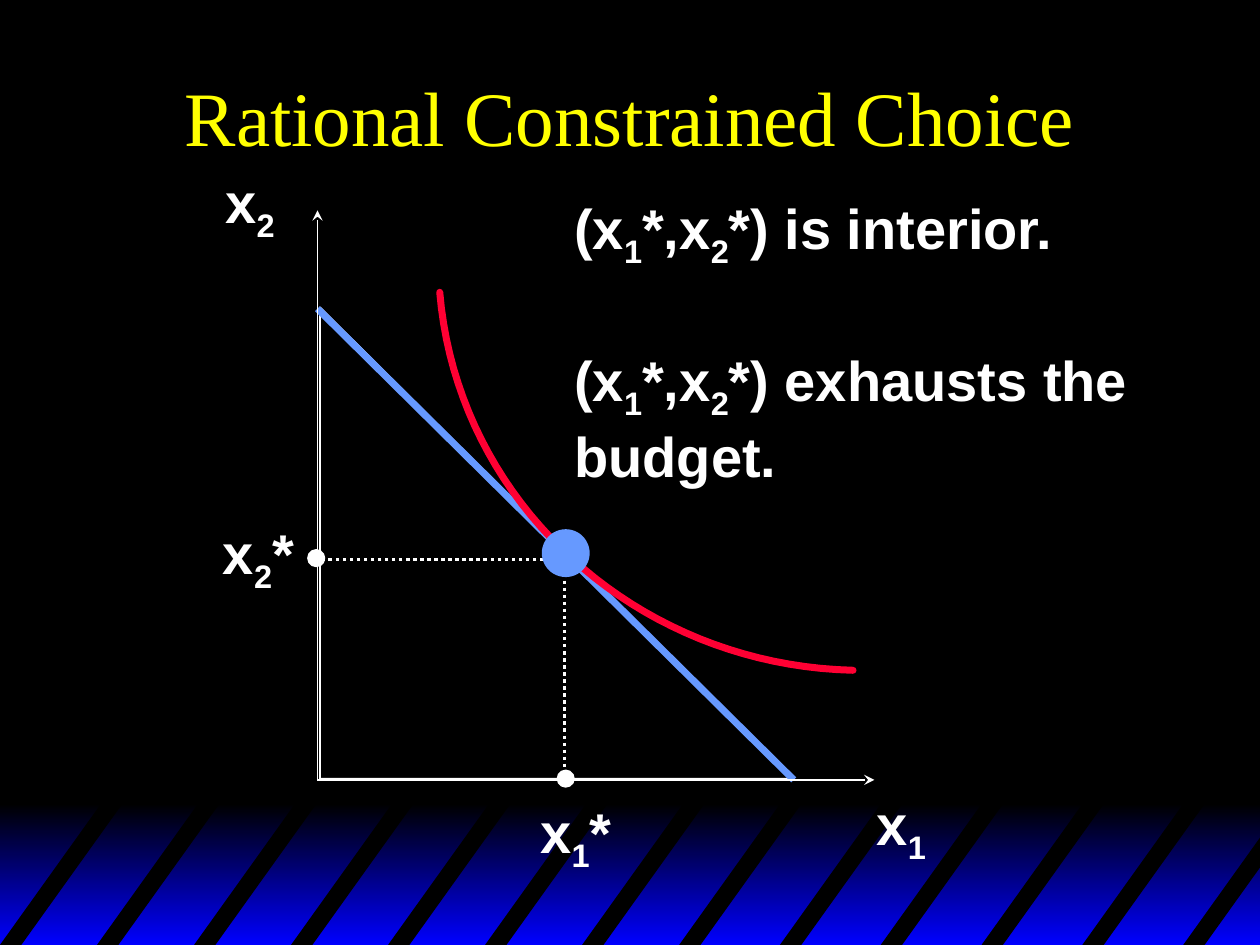
from dataclasses import dataclass
from typing import Optional

import pptx
import pptx.dml.color
import pptx.enum.dml
import pptx.enum.shapes
import pptx.enum.text
import pptx.oxml.ns
import pptx.util
from lxml import etree

COLORS = {"black": "000000", "navy": "0000FF", "white": "FFFFFF",
          "title": "FFFF00", "budget": "6699FF", "curve": "FF0033"}
SHAPES = pptx.enum.shapes.MSO_SHAPE

presentation = pptx.Presentation()
presentation.slide_width = pptx.util.Inches(10)
presentation.slide_height = pptx.util.Inches(7.5)
slide = presentation.slides.add_slide(presentation.slide_layouts[6])

# Grid of 100 columns by 75 rows of square cells
COLUMNS, ROWS = 100, 75
CELL = presentation.slide_width / COLUMNS
ORIGIN_X, ORIGIN_Y = 25.2, 61.9  # where the axes meet
CHOICE_X, CHOICE_Y = 44.8, 44.4  # the optimal bundle


@dataclass(frozen=True)
class Segment:
    start: tuple[float, float]
    end: tuple[float, float]
    width: float = 1
    color: str = "white"
    dotted: bool = False
    arrow: bool = False


@dataclass(frozen=True)
class Dot:
    x: float
    y: float
    size: float
    color: str
    outlined: bool = True


@dataclass(frozen=True)
class Label:
    text: str  # "_" puts the next character in subscript
    box: tuple[float, float, float, float]


def cells(*values: float) -> list[int]:
    return [round(value * CELL) for value in values]


def rgb(name: str) -> pptx.dml.color.RGBColor:
    return pptx.dml.color.RGBColor.from_string(COLORS[name])


def style(shape, fill: Optional[str] = None, line: Optional[str] = None,
          width: float = 1) -> None:
    shape.shadow.inherit = False
    if fill:
        shape.fill.solid()
        shape.fill.fore_color.rgb = rgb(fill)
    else:
        shape.fill.background()
    if line:
        shape.line.color.rgb = rgb(line)
        shape.line.width = pptx.util.Pt(width)
    else:
        shape.line.fill.background()


def add_outline(points: list[tuple[float, float]], close: bool):
    corners = [tuple(cells(*point)) for point in points]
    builder = slide.shapes.build_freeform(*corners[0])
    builder.add_line_segments(corners[1:], close=close)
    return builder.convert_to_shape()


def add_segment(segment: Segment) -> None:
    connector = slide.shapes.add_connector(
        pptx.enum.shapes.MSO_CONNECTOR.STRAIGHT,
        *cells(*segment.start, *segment.end))
    connector.line.color.rgb = rgb(segment.color)
    connector.line.width = pptx.util.Pt(segment.width)
    if segment.dotted:
        connector.line.dash_style = pptx.enum.dml.MSO_LINE.ROUND_DOT
    if segment.arrow:
        etree.SubElement(connector.line._get_or_add_ln(),
                         pptx.oxml.ns.qn("a:tailEnd"), type="stealth")
    etree.SubElement(connector._element.spPr, pptx.oxml.ns.qn("a:effectLst"))


def add_dot(dot: Dot) -> None:
    half = dot.size / 2
    shape = slide.shapes.add_shape(
        SHAPES.OVAL, *cells(dot.x - half, dot.y - half, dot.size, dot.size))
    style(shape, dot.color, dot.color if dot.outlined else None)


def add_text(text: str, box: tuple[float, float, float, float], *,
             font: str = "Arial", size: float = 32, color: str = "white",
             bold: bool = True, wrap: bool = False, centered: bool = False) -> None:
    frame = slide.shapes.add_textbox(*cells(*box)).text_frame
    frame.word_wrap = wrap
    paragraph = frame.paragraphs[0]
    if centered:
        frame.vertical_anchor = pptx.enum.text.MSO_ANCHOR.MIDDLE
        paragraph.alignment = pptx.enum.text.PP_ALIGN.CENTER
    else:
        frame.auto_size = pptx.enum.text.MSO_AUTO_SIZE.SHAPE_TO_FIT_TEXT

    def add_run(content: str, subscript: bool = False) -> None:
        run = paragraph.add_run()
        run.text = content
        run.font.name, run.font.size, run.font.bold = font, pptx.util.Pt(size), bold
        run.font.color.rgb = rgb(color)
        if subscript:
            run.font._element.set("baseline", "-25000")

    for row, line in enumerate(text.split("\n")):
        if row:
            paragraph.add_line_break()
        first, *others = line.split("_")
        add_run(first)
        for part in others:
            add_run(part[0], subscript=True)
            if part[1:]:
                add_run(part[1:])


def add_stripe(left: float, thickness: float = 1.7,
               run: float = 8.3, rise: float = 11.6) -> None:
    def top(x: float) -> tuple[float, float]:
        end = min(COLUMNS, x + run)  # cut at the slide's right edge
        return end, ROWS - (end - x) * rise / run

    right = left + thickness
    style(add_outline([(left, ROWS), top(left), top(right), (right, ROWS)], True),
          "black")


def bezier(points: list[tuple[float, float]], steps: int = 40) -> list[tuple[float, float]]:
    curve = []
    for step in range(steps + 1):
        t = step / steps
        weights = ((1 - t) ** 3, 3 * t * (1 - t) ** 2, 3 * t * t * (1 - t), t ** 3)
        curve.append(tuple(sum(weight * point[axis] for weight, point
                               in zip(weights, points)) for axis in (0, 1)))
    return curve


# Background: black, with a striped blue band at the foot
slide.background.fill.solid()
slide.background.fill.fore_color.rgb = rgb("black")
band = slide.shapes.add_shape(SHAPES.RECTANGLE, *cells(0, 63.8, COLUMNS, ROWS - 63.8))
style(band)
band.fill.gradient()
band.fill.gradient_angle = 270
for stop, name in zip(band.fill.gradient_stops, ("black", "navy")):
    stop.color.rgb = rgb(name)
for index in range(13):
    add_stripe(7.7 * index + 0.3 * max(0, index - 7))

# Budget set and title
budget_set = slide.shapes.add_shape(SHAPES.RIGHT_TRIANGLE, *cells(25.4, 24.4, 37.6, 37.4))
style(budget_set, line="white")
add_text("Rational Constrained Choice", (7.5, 2.5, 85, 13.3), font="Times New Roman",
         size=44, color="title", bold=False, wrap=True, centered=True)

# Budget line, indifference curve and axes
add_segment(Segment((ORIGIN_X, 24.5), (63, ORIGIN_Y), 4, "budget"))
indifference = add_outline(
    bezier([(67.7, 53.2), (50.5, 52.8), (36.3, 39.9), (34.9, 23.2)]), False)
style(indifference, line="curve", width=4)
curve_line = indifference.line._get_or_add_ln()
curve_line.set("cap", "rnd")
etree.SubElement(curve_line, pptx.oxml.ns.qn("a:round"))

SEGMENTS = [
    Segment((ORIGIN_X, ORIGIN_Y), (ORIGIN_X, 16.7), arrow=True),
    Segment((ORIGIN_X, ORIGIN_Y), (69.4, ORIGIN_Y), arrow=True),
    Segment((CHOICE_X, CHOICE_Y), (CHOICE_X, ORIGIN_Y), 2, dotted=True),
    Segment((CHOICE_X, CHOICE_Y), (25.4, CHOICE_Y), 2, dotted=True),
]
for segment in SEGMENTS:
    add_segment(segment)

# Chosen bundle and its marks on the axes
for dot in (Dot(44.9, 43.9, 3.8, "budget", outlined=False),
            Dot(25.1, 44.3, 1.3, "white"), Dot(44.9, 61.8, 1.3, "white")):
    add_dot(dot)

# Axis labels and statements
LABELS = [
    Label("x_1", (68.6, 62.2, 6.1, 6.3)),
    Label("x_2", (16.9, 12.8, 6.1, 6.3)),
    Label("x_1*", (41.9, 62.8, 7.8, 6.3)),
    Label("x_2*", (16.7, 40.7, 7.8, 6.3)),
    Label("(x_1*,x_2*) is interior.", (44.6, 14.9, 40.5, 6.3)),
    Label("(x_1*,x_2*) exhausts the\nbudget.", (44.6, 26.9, 46.2, 11.7)),
]
for label in LABELS:
    add_text(label.text, label.box)

presentation.save("out.pptx")
